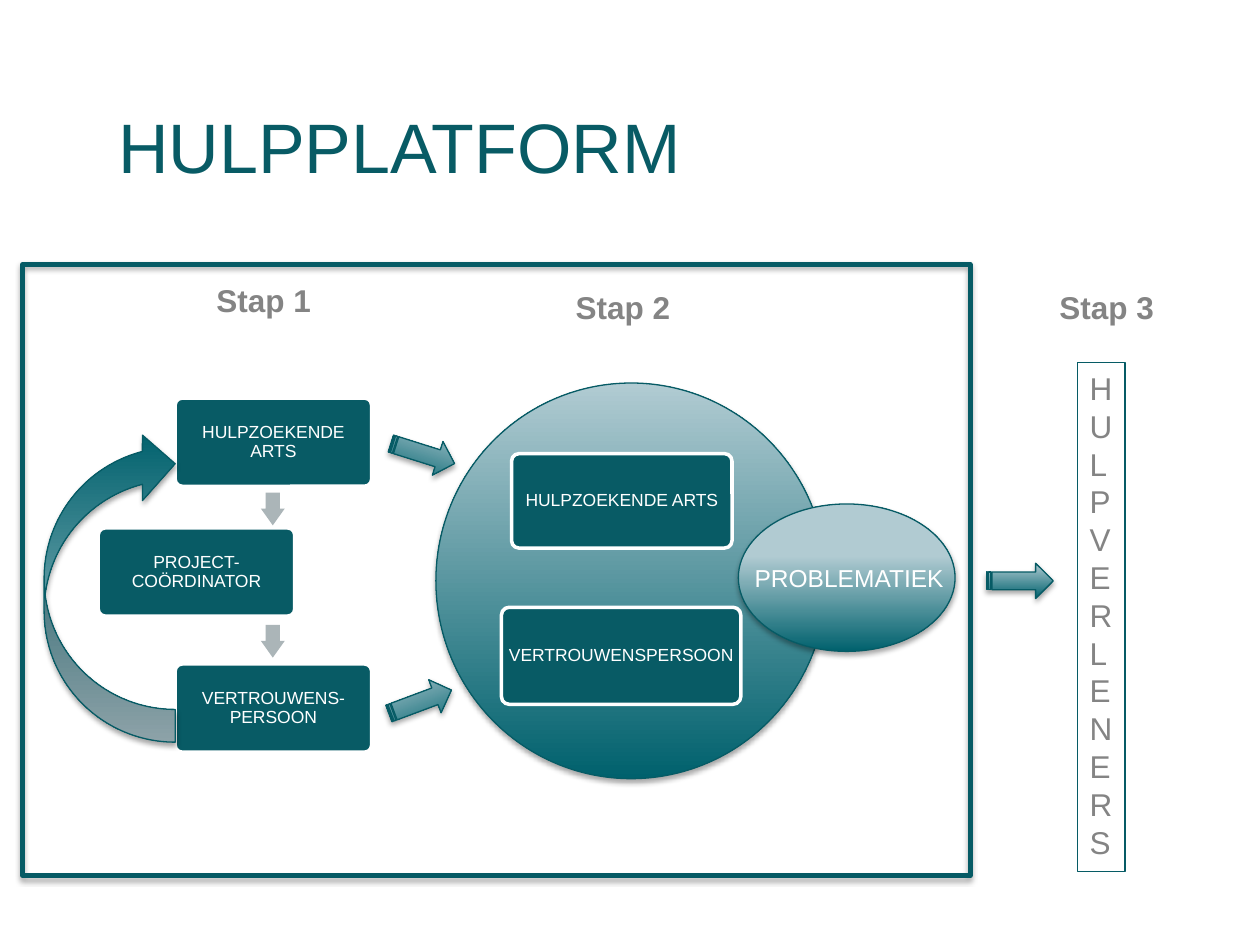
from lxml import etree
from pptx import Presentation
from pptx.dml import color
from pptx.enum import shapes, text
from pptx.oxml import ns
from pptx.util import Inches, Pt

TEAL, DARK, LINE, LIGHT = "085B65", "00616D", "065B65", "B1CBD2"
GREY, SILVER, WHITE = "848484", "ABB5B8", "FFFFFF"
KIND = shapes.MSO_SHAPE


def rgb(value):
    return color.RGBColor.from_string(value)


def add_shadow(shape):
    """Soft shadow straight below the shape."""
    effects = shape._element.spPr.find(ns.qn("a:effectLst"))
    outer = etree.SubElement(effects, ns.qn("a:outerShdw"), blurRad=str(Pt(3.1)),
                             dist=str(Pt(1.8)), dir="5400000", rotWithShape="0")
    black = etree.SubElement(outer, ns.qn("a:srgbClr"), val="000000")
    etree.SubElement(black, ns.qn("a:alpha"), val="35000")


def write(frame, *lines, size=18, hue=GREY, bold=False, align=text.PP_ALIGN.LEFT,
          anchor=text.MSO_ANCHOR.TOP, spacing=None, wrap=True, insets=None):
    frame.word_wrap = wrap
    frame.vertical_anchor = anchor
    if insets:
        (frame.margin_left, frame.margin_top,
         frame.margin_right, frame.margin_bottom) = [Inches(i) for i in insets]
    for index, line in enumerate(lines):
        para = frame.add_paragraph() if index else frame.paragraphs[0]
        para.alignment = align
        para.line_spacing = spacing
        span = para.add_run()
        span.text = line
        span.font.name, span.font.size, span.font.bold = "Arial", Pt(size), bold
        span.font.color.rgb = rgb(hue)


def add_label(page, left, top, width, height, words, **style):
    box = page.shapes.add_textbox(*map(Inches, (left, top, width, height)))
    write(box.text_frame, words, **style)


def add_part(page, kind, left, top, width, height, fill=None, line=LINE, weight=0.75,
             light_at=None, turn=0, shadow=False):
    """A shape with a plain fill, or a dark-to-light gradient ending at light_at."""
    part = page.shapes.add_shape(kind, *map(Inches, (left, top, width, height)))
    part.shadow.inherit = False
    part.rotation = turn
    if light_at:
        part.fill.gradient()
        part.fill.gradient_angle = 90
        for stop, hue, place in zip(part.fill.gradient_stops, (DARK, LIGHT), (0, light_at)):
            stop.color.rgb, stop.position = rgb(hue), place
    elif fill:
        part.fill.solid()
        part.fill.fore_color.rgb = rgb(fill)
    else:
        part.fill.background()
    if line:
        part.line.color.rgb, part.line.width = rgb(line), Pt(weight)
    else:
        part.line.fill.background()
    if shadow:
        add_shadow(part)
    return part


def add_role(page, left, top, width, height, words):
    role = add_part(page, KIND.ROUNDED_RECTANGLE, left, top, width, height,
                    fill=TEAL, line=WHITE, weight=2)
    role.adjustments[0] = 0.08
    write(role.text_frame, words, size=10, hue=WHITE, align=text.PP_ALIGN.CENTER,
          anchor=text.MSO_ANCHOR.MIDDLE, spacing=0.9, insets=[0.02] * 4)


def add_striped_arrow(page, left, top, turn=0):
    add_part(page, KIND.STRIPED_RIGHT_ARROW, left, top, 0.53, 0.28,
             light_at=1, turn=turn, shadow=True)


def add_contact_step(page, left, top):
    """Step 1: three roles in a chain, with a curved arrow back to the first."""
    roles = ((1.04, 0, "HULPZOEKENDE ARTS"), (0.43, 1.03, "PROJECT- COÖRDINATOR"),
             (1.04, 2.11, "VERTROUWENS-PERSOON"))
    for across, down, words in roles:
        add_role(page, left + across, top + down, 1.56, 0.7, words)
    for down in (0.75, 1.8):
        arrow = add_part(page, KIND.DOWN_ARROW, left + 1.72, top + down, 0.19, 0.26,
                         fill=SILVER, line=None)
        arrow.adjustments[0], arrow.adjustments[1] = 0.6, 0.7
    add_part(page, KIND.CURVED_LEFT_ARROW, left, top + 0.26, 1.04, 2.47,
             light_at=1, turn=180, shadow=True)


def add_talk_step(page, left, top):
    """Step 2: two roles in a circle, overlapped by the problem."""
    add_part(page, KIND.OVAL, left, top, 3.1, 3.14, light_at=1, shadow=True)
    add_role(page, left + 0.6, top + 0.56, 1.75, 0.75, "HULPZOEKENDE ARTS")
    add_role(page, left + 0.52, top + 1.78, 1.9, 0.77, "VERTROUWENSPERSOON")
    add_part(page, KIND.OVAL, left + 2.4, top + 0.96, 1.72, 1.17,
             light_at=0.65, shadow=True)
    add_label(page, left + 2.43, top + 1.38, 2.14, 0.34, "PROBLEMATIEK",
              size=14, hue=WHITE)


def add_helper_step(page, left, top, width, height):
    """Step 3: a box so narrow that each letter takes its own line."""
    helpers = add_part(page, KIND.RECTANGLE, left, top, width, height)
    write(helpers.text_frame, "HULPVERLENER", "S", insets=(0.1, 0.05, 0.1, 0.05))


def main():
    deck = Presentation()
    deck.slide_width, deck.slide_height = Inches(10), Inches(7.5)
    page = deck.slides.add_slide(deck.slide_layouts[6])

    # Title and frame
    add_label(page, 0.94, 0.82, 8.13, 0.61, "HULPPLATFORM", size=40, hue=TEAL,
              insets=[0] * 4)
    add_part(page, KIND.RECTANGLE, 0.18, 2.1, 7.52, 4.85, weight=2.75, shadow=True)

    # Steps
    add_contact_step(page, 0.35, 3.16)
    add_talk_step(page, 3.46, 3.04)
    add_helper_step(page, 8.55, 2.88, 0.38, 4.04)
    for number, (left, top) in enumerate(((1.62, 2.18), (4.47, 2.24), (8.31, 2.24)), 1):
        add_label(page, left, top, 1.06, 0.4, f"Stap {number}", bold=True, wrap=False)

    # Arrows between the steps
    for left, top, turn in ((3.09, 3.46, 17.5), (3.07, 5.43, 339.5), (7.83, 4.47, 0)):
        add_striped_arrow(page, left, top, turn)

    deck.save("out.pptx")


if __name__ == "__main__":
    main()
